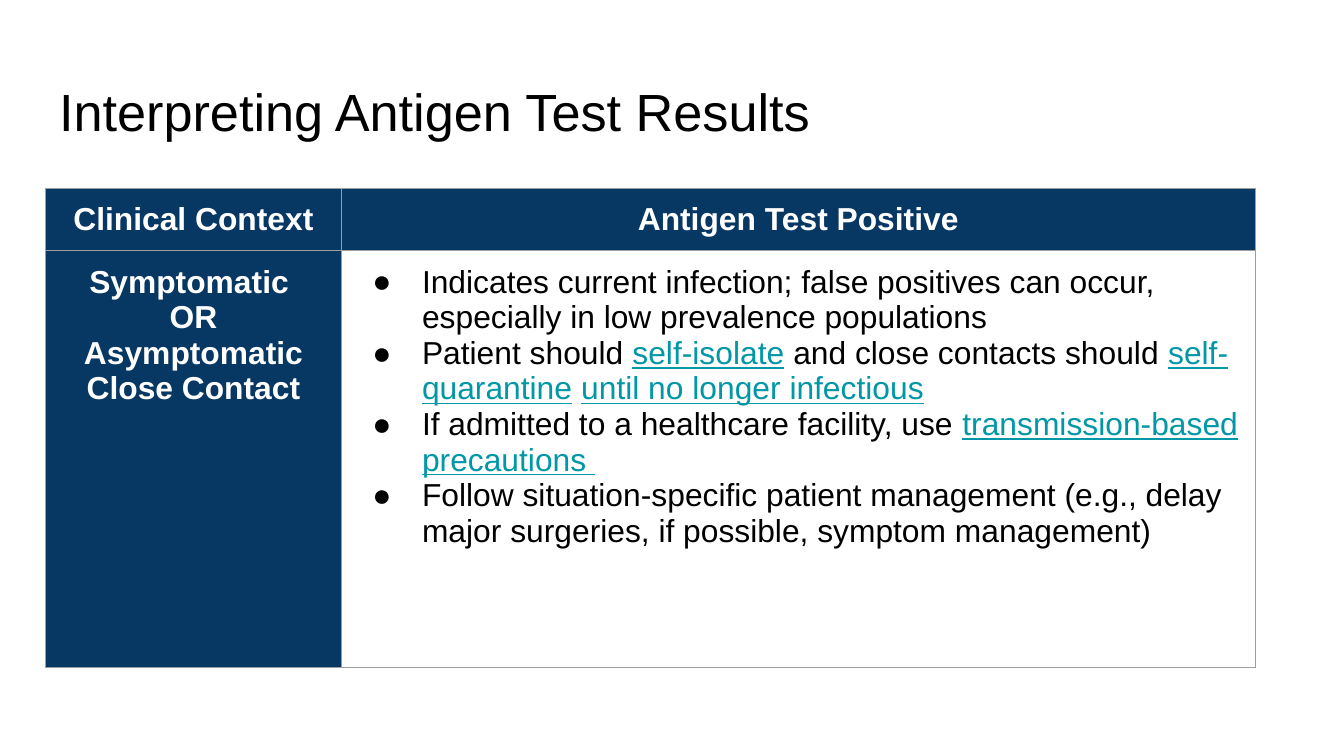
from lxml import etree
from pptx import Presentation
from pptx.dml.color import RGBColor
from pptx.enum.text import MSO_ANCHOR, PP_ALIGN
from pptx.oxml.ns import qn
from pptx.util import Inches, Pt

TOP, LEFT, CENTER = MSO_ANCHOR.TOP, PP_ALIGN.LEFT, PP_ALIGN.CENTER
NAVY = RGBColor(0x07, 0x37, 0x63)
TEAL = RGBColor(0x00, 0x97, 0xA7)
GRAY = RGBColor(0x9E, 0x9E, 0x9E)
BLACK = RGBColor(0, 0, 0)
WHITE = RGBColor(0xFF, 0xFF, 0xFF)
FONT = "Arial"
PAD = Inches(0.1)

TITLE = "Interpreting Antigen Test Results"
HEADERS = ["Clinical Context", "Antigen Test Positive"]
CONTEXT = ["Symptomatic ", "OR", "Asymptomatic Close Contact"]
# Each bullet alternates plain and underlined pieces, starting with plain.
GUIDANCE = [
    ["Indicates current infection; false positives can occur, "
     "especially in low prevalence populations"],
    ["Patient should ", "self-isolate", " and close contacts should ",
     "self-quarantine", " ", "until no longer infectious"],
    ["If admitted to a healthcare facility, use ",
     "transmission-based precautions "],
    ["Follow situation-specific patient management (e.g., delay major "
     "surgeries, if possible, symptom management)"],
]
COL_WIDTHS = [2.2, 6.8]
ROW_HEIGHTS = [0.46, 1.55, 1.55]


def set_font(r, size, color, bold=False, underline=False):
    r.font.name, r.font.size = FONT, Pt(size)
    r.font.color.rgb = color
    r.font.bold, r.font.underline = bold, underline


def set_margins(target):
    target.margin_left = target.margin_right = PAD
    target.margin_top = target.margin_bottom = PAD


def style_cell(cell, color):
    set_margins(cell)
    cell.vertical_anchor = TOP
    tcPr = cell._tc.get_or_add_tcPr()
    for side in ("lnL", "lnR", "lnT", "lnB"):
        ln = etree.SubElement(tcPr, qn(f"a:{side}"), w=str(Pt(0.75)))
        fill = etree.SubElement(ln, qn("a:solidFill"))
        etree.SubElement(fill, qn("a:srgbClr"), val=str(GRAY))
    cell.fill.solid()
    cell.fill.fore_color.rgb = color


def add_bullet(p):
    pPr = p._p.get_or_add_pPr()
    pPr.set("marL", str(Inches(0.5)))
    pPr.set("indent", str(Inches(-0.37)))
    color = etree.SubElement(pPr, qn("a:buClr"))
    etree.SubElement(color, qn("a:srgbClr"), val=str(BLACK))
    etree.SubElement(pPr, qn("a:buFont"), typeface=FONT)
    etree.SubElement(pPr, qn("a:buChar"), char="●")


def fill_label(cell, lines):
    cell.text_frame.text = "\n".join(lines)
    for p in cell.text_frame.paragraphs:
        p.alignment = CENTER
        set_font(p.runs[0], 17, WHITE, bold=True)


def fill_bullets(cell, bullets):
    tf = cell.text_frame
    for i, pieces in enumerate(bullets):
        p = tf.add_paragraph() if i else tf.paragraphs[0]
        p.alignment = LEFT
        add_bullet(p)
        for j, piece in enumerate(pieces):
            linked = j % 2 == 1
            r = p.add_run()
            r.text = piece
            set_font(r, 17, TEAL if linked else BLACK, underline=linked)


prs = Presentation()
prs.slide_width = Inches(10)
prs.slide_height = prs.slide_width * 9 // 16
s = prs.slides.add_slide(prs.slide_layouts[5])

title = s.shapes.title
title.left, title.top = Inches(0.34), Inches(0.49)
title.width, title.height = Inches(9.32), Inches(0.63)
tf = title.text_frame
tf.text = TITLE
tf.vertical_anchor = TOP
set_margins(tf)
tf.paragraphs[0].alignment = LEFT
set_font(tf.paragraphs[0].runs[0], 28, BLACK)

table = s.shapes.add_table(
    len(ROW_HEIGHTS), len(COL_WIDTHS), Inches(0.34), Inches(1.4),
    Inches(sum(COL_WIDTHS)), Inches(sum(ROW_HEIGHTS))).table
table.first_row = table.horz_banding = False
for column, width in zip(table.columns, COL_WIDTHS):
    column.width = Inches(width)
for row, height in zip(table.rows, ROW_HEIGHTS):
    row.height = Inches(height)

for i in range(len(ROW_HEIGHTS)):
    for j in range(len(COL_WIDTHS)):
        style_cell(table.cell(i, j), NAVY if i == 0 or j == 0 else WHITE)
for j, header in enumerate(HEADERS):
    fill_label(table.cell(0, j), [header])
    table.cell(1, j).merge(table.cell(2, j))
fill_label(table.cell(1, 0), CONTEXT)
fill_bullets(table.cell(1, 1), GUIDANCE)

prs.save("out.pptx")
